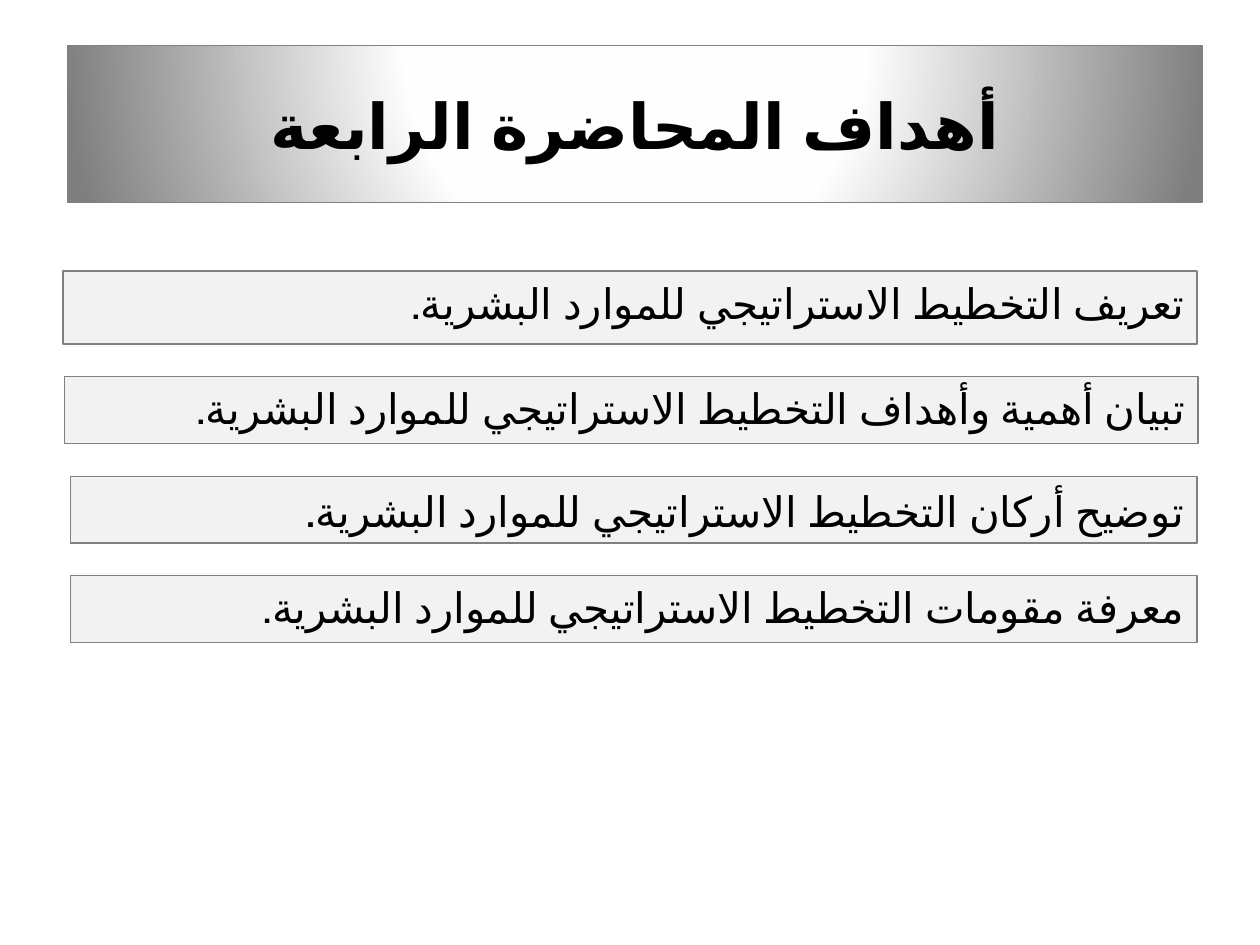
from pptx import Presentation
from pptx.dml.color import RGBColor
from pptx.enum.lang import MSO_LANGUAGE_ID
from pptx.enum.shapes import MSO_SHAPE
from pptx.enum.text import MSO_ANCHOR, PP_ALIGN
from pptx.oxml import parse_xml
from pptx.oxml.ns import nsdecls, qn
from pptx.util import Inches, Pt

ARABIC = MSO_LANGUAGE_ID.ARABIC
RECTANGLE = MSO_SHAPE.RECTANGLE
TOP, MIDDLE = MSO_ANCHOR.TOP, MSO_ANCHOR.MIDDLE
CENTER, JUSTIFY = PP_ALIGN.CENTER, PP_ALIGN.JUSTIFY

THEME = {
    "font": "Calibri",
    "text": "000000",
    "bar": "F2F2F2",
    "border": "808080",
    "border_width": 0.75,
    "gradient": [(0, "FFFFFF"), (40, "FEFEFE"), (100, "7F7F7F")],
    "title_size": 36,
    "goal_size": 24,
    "stop_size": 26,
    "space_before": 4.8,
}

TITLE = "أهداف المحاضرة الرابعة"
TITLE_BOX = (0.54, 0.36, 9, 1.25)
GOALS = [
    (0.5, 9, 0.58, ["تعريف التخطيط الاستراتيجي للموارد البشرية."]),
    (0.51, 9, 0.53, ["تبيان أهمية وأهداف التخطيط الاستراتيجي للموارد البشرية."]),
    (0.56, 8.94, 0.53, ["توضيح أركان التخطيط الاستراتيجي للموارد البشرية", "."]),
    (0.56, 8.94, 0.53, ["معرفة مقومات التخطيط الاستراتيجي للموارد البشرية."]),
]
FIRST_GOAL_TOP = 2.15
GOAL_GAP = 0.26


def place(shape, box):
    shape.left, shape.top, shape.width, shape.height = map(Inches, box)


def outline(shape):
    shape.line.color.rgb = RGBColor.from_string(THEME["border"])
    shape.line.width = Pt(THEME["border_width"])


def style_paragraph(paragraph, size, alignment, bold=False):
    paragraph.alignment = alignment
    font = paragraph.font
    font.name = THEME["font"]
    font.size = Pt(size)
    font.bold = bold
    font.language_id = ARABIC
    font.color.rgb = RGBColor.from_string(THEME["text"])


def fill_radial(shape):
    stops = "".join(
        f'<a:gs pos="{position * 1000}"><a:srgbClr val="{color}"/></a:gs>'
        for position, color in THEME["gradient"]
    )
    gradient = parse_xml(
        f'<a:gradFill {nsdecls("a")} rotWithShape="1"><a:gsLst>{stops}</a:gsLst>'
        '<a:path path="circle"><a:fillToRect l="50000" t="-80000" r="50000" b="180000"/>'
        "</a:path></a:gradFill>"
    )
    shape._element.spPr.find(qn("a:ln")).addprevious(gradient)


def add_title(slide):
    title = slide.shapes.title
    place(title, TITLE_BOX)
    outline(title)
    fill_radial(title)
    title.text_frame.text = TITLE
    title.text_frame.vertical_anchor = MIDDLE
    style_paragraph(title.text_frame.paragraphs[0], THEME["title_size"], CENTER, bold=True)


def add_goal(slide, box, texts):
    bar = slide.shapes.add_shape(RECTANGLE, *map(Inches, box))
    bar.shadow.inherit = False
    bar.fill.solid()
    bar.fill.fore_color.rgb = RGBColor.from_string(THEME["bar"])
    outline(bar)
    bar.text_frame.word_wrap = True
    bar.text_frame.vertical_anchor = TOP
    paragraph = bar.text_frame.paragraphs[0]
    style_paragraph(paragraph, THEME["goal_size"], JUSTIFY)
    paragraph.space_before = Pt(THEME["space_before"])
    paragraph._p.get_or_add_pPr().set("rtl", "1")
    for text in texts:
        run = paragraph.add_run()
        run.text = text
        if text == ".":
            run.font.size = Pt(THEME["stop_size"])


def main():
    presentation = Presentation()
    presentation.slide_width, presentation.slide_height = Inches(10), Inches(7.5)
    slide = presentation.slides.add_slide(presentation.slide_layouts[5])
    add_title(slide)
    top = FIRST_GOAL_TOP
    for left, width, height, texts in GOALS:
        add_goal(slide, (left, top, width, height), texts)
        top += height + GOAL_GAP
    presentation.save("out.pptx")


if __name__ == "__main__":
    main()
